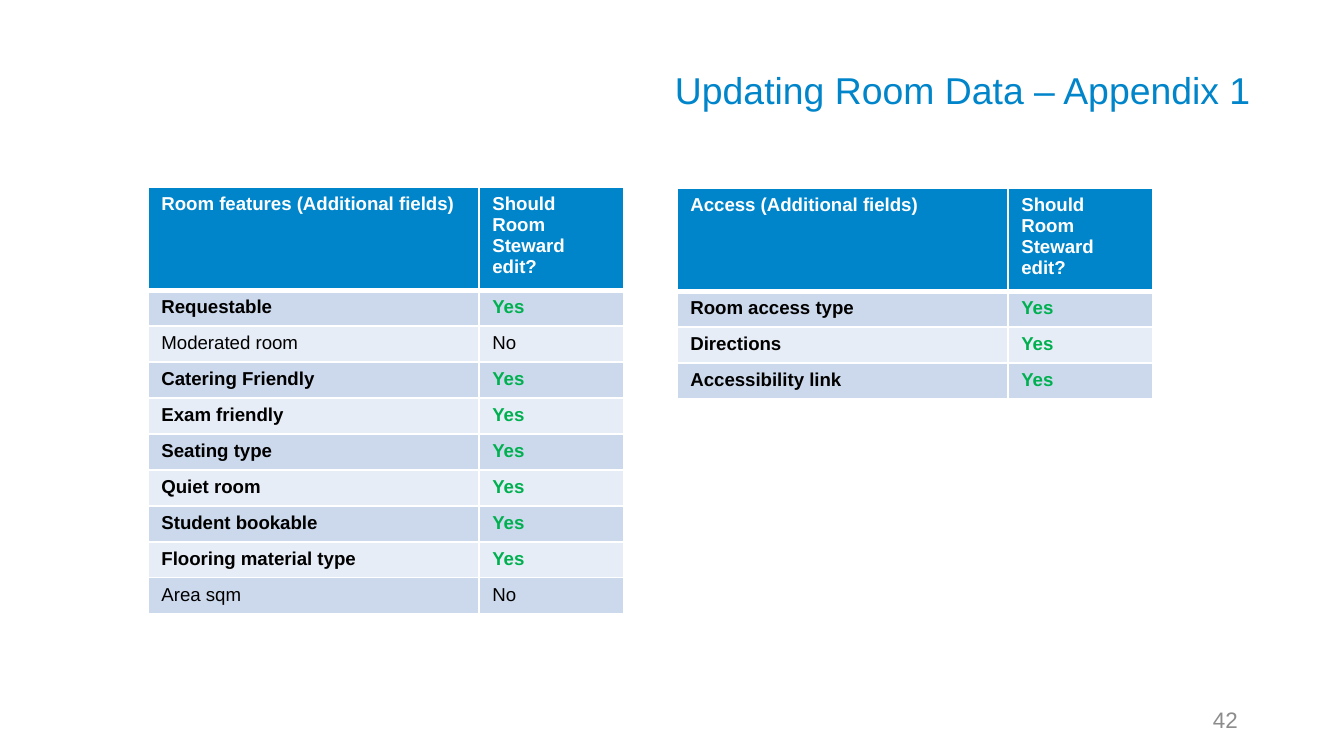
import lxml.etree
import pptx
import pptx.dml.color
import pptx.enum.text
import pptx.oxml.ns
import pptx.util
from dataclasses import dataclass

PX = 914400 / 134.4  # EMU in one px


@dataclass(frozen=True)
class Theme:
    font: str = "Arial"
    blue: str = "0085CA"
    odd_row: str = "CCD9EC"
    even_row: str = "E7EDF6"
    white: str = "FFFFFF"
    black: str = "000000"
    green: str = "00B050"
    grey: str = "8C8C8C"
    title_size: int = 20
    number_size: int = 12
    table_size: int = 10


theme = Theme()


def write(frame, text, size, color, bold=False, align=None):
    frame.text = text
    paragraph = frame.paragraphs[0]
    paragraph.alignment = align
    font = paragraph.runs[0].font
    font.name = theme.font
    font.size = pptx.util.Pt(size)
    font.bold = bold
    font.color.rgb = pptx.dml.color.RGBColor.from_string(color)


def add_borders(cell, top, bottom):
    """Draw white cell borders; top and bottom are widths in points."""
    properties = cell._tc.get_or_add_tcPr()
    widths = {"a:lnL": 1, "a:lnR": 1, "a:lnT": top, "a:lnB": bottom}
    for position, (tag, width) in enumerate(widths.items()):
        line = lxml.etree.Element(pptx.oxml.ns.qn(tag), w=str(pptx.util.Pt(width)))
        fill = lxml.etree.SubElement(line, pptx.oxml.ns.qn("a:solidFill"))
        lxml.etree.SubElement(fill, pptx.oxml.ns.qn("a:srgbClr"), val=theme.white)
        properties.insert(position, line)


presentation = pptx.Presentation()
presentation.slide_width = round(1344 * PX)
presentation.slide_height = round(756 * PX)
slide = presentation.slides.add_slide(presentation.slide_layouts[5])
right = pptx.enum.text.PP_ALIGN.RIGHT
middle = pptx.enum.text.MSO_ANCHOR.MIDDLE

# Title
title = slide.shapes.title
title.left, title.top, title.width, title.height = [round(n * PX) for n in (478, 58, 773, 56)]
heading = title.text_frame
heading.margin_left = heading.margin_right = heading.margin_bottom = 0
heading.margin_top = round(7 * PX)
heading.vertical_anchor = middle
write(heading, "Updating Room Data – Appendix 1", theme.title_size, theme.blue, align=right)

# Page number
page_number = slide.shapes.add_textbox(*[round(n * PX) for n in (949, 700, 302, 40)]).text_frame
page_number.word_wrap = True
page_number.vertical_anchor = middle
write(page_number, "42", theme.number_size, theme.grey, align=right)

# Tables: left, top, body height, first heading, fields with the steward's right to edit
column_widths = (331, 145)
header_height = 97
field_groups = [
    (677, 188, 103, "Access (Additional fields)", [
        ("Room access type", "Yes"),
        ("Directions", "Yes"),
        ("Accessibility link", "Yes"),
    ]),
    (148, 187, 318, "Room features (Additional fields)", [
        ("Requestable", "Yes"),
        ("Moderated room", "No"),
        ("Catering Friendly", "Yes"),
        ("Exam friendly", "Yes"),
        ("Seating type", "Yes"),
        ("Quiet room", "Yes"),
        ("Student bookable", "Yes"),
        ("Flooring material type", "Yes"),
        ("Area sqm", "No"),
    ]),
]

for left, top, body_height, group, fields in field_groups:
    bounds = (left, top, sum(column_widths), header_height + body_height)
    rows = [(group, "Should Room Steward edit?")] + fields
    table = slide.shapes.add_table(len(rows), 2, *[round(n * PX) for n in bounds]).table
    for column, width in zip(table.columns, column_widths):
        column.width = round(width * PX)

    for r, (field, editable) in enumerate(rows):
        is_header = r == 0
        height = header_height if is_header else body_height / len(fields)
        table.rows[r].height = round(height * PX)
        if is_header:
            fill, colors = theme.blue, (theme.white, theme.white)
        else:
            fill = theme.odd_row if r % 2 else theme.even_row
            colors = (theme.black, theme.green if editable == "Yes" else theme.black)

        for c, text in enumerate((field, editable)):
            cell = table.cell(r, c)
            cell.fill.solid()
            cell.fill.fore_color.rgb = pptx.dml.color.RGBColor.from_string(fill)
            add_borders(cell, top=3 if r == 1 else 1, bottom=3 if is_header else 1)
            write(cell.text_frame, text, theme.table_size, colors[c], bold=editable != "No")

presentation.save("out.pptx")
